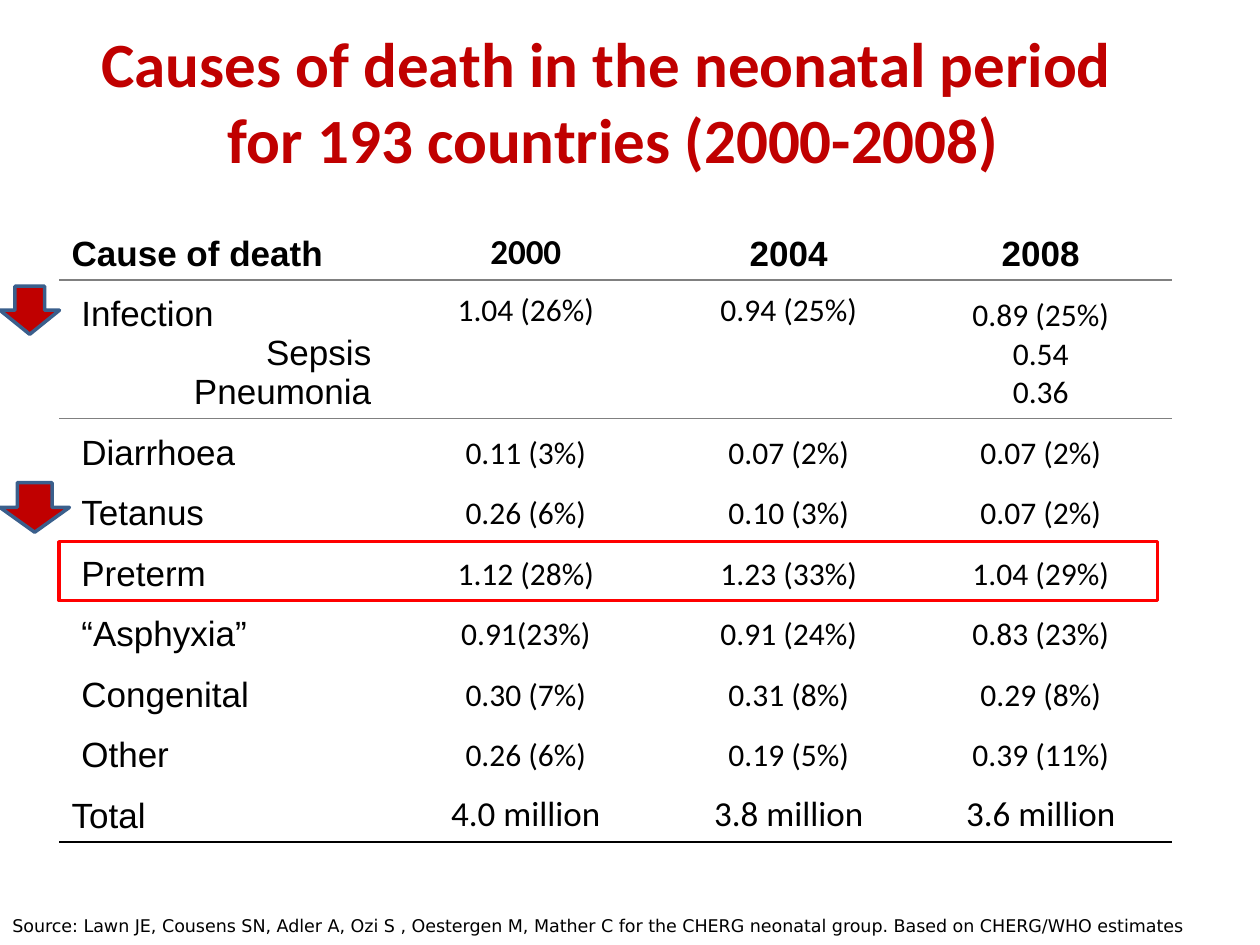
import pptx
import pptx.util
import pptx.dml.color
import pptx.enum.shapes
import pptx.enum.text
import pptx.oxml
import pptx.oxml.ns
from dataclasses import dataclass

Cm, Pt = pptx.util.Cm, pptx.util.Pt
SHAPE = pptx.enum.shapes.MSO_SHAPE
ANCHOR = pptx.enum.text.MSO_ANCHOR
ALIGN = pptx.enum.text.PP_ALIGN
NO_GRID_STYLE = "{2D5ABB26-0587-4C30-8999-92F81FD0307C}"


@dataclass(frozen=True)
class Theme:
    red: str = "C00000"
    highlight: str = "FF0000"
    arrow_line: str = "3A5F8C"
    black: str = "000000"
    grey: str = "808080"
    white: str = "FFFFFF"
    body: str = "Calibri"
    label: str = "Arial"
    note: str = "DejaVu Sans"
    title_size: int = 36
    label_size: int = 20
    value_size: int = 18
    note_size: int = 10


def rgb(value):
    return pptx.dml.color.RGBColor.from_string(value)


class Deck:
    def __init__(self, theme):
        self.theme = theme
        self.prs = pptx.Presentation()
        self.prs.slide_width, self.prs.slide_height = Cm(25.4), Cm(19.05)
        self.s = self.prs.slides.add_slide(self.prs.slide_layouts[6])

    def set_text(self, tf, lines, font, size, color, aligns, bold=False):
        for i, (line, align) in enumerate(zip(lines, aligns)):
            p = tf.paragraphs[0] if i == 0 else tf.add_paragraph()
            p.text = line
            p.alignment = align
            p.font.name, p.font.size, p.font.bold = font, Pt(size), bold
            p.font.color.rgb = rgb(color)

    def title(self, x, y, w, h, lines):
        tf = self.s.shapes.add_textbox(Cm(x), Cm(y), Cm(w), Cm(h)).text_frame
        tf.word_wrap = False
        tf.vertical_anchor = ANCHOR.MIDDLE
        self.set_text(tf, lines, self.theme.body, self.theme.title_size,
                      self.theme.red, [ALIGN.CENTER] * len(lines), bold=True)

    def shape(self, kind, x, y, w, h, fill=None, line=None):
        sp = self.s.shapes.add_shape(kind, Cm(x), Cm(y), Cm(w), Cm(h))
        sp.shadow.inherit = False
        if fill:
            sp.fill.solid()
            sp.fill.fore_color.rgb = rgb(fill)
        else:
            sp.fill.background()
        if line:
            sp.line.color.rgb = rgb(line)
            sp.line.width = Pt(2)
        else:
            sp.line.fill.background()
        return sp

    def note(self, x, y, w, h, text):
        tf = self.shape(SHAPE.RECTANGLE, x, y, w, h, self.theme.white).text_frame
        tf.word_wrap = True
        self.set_text(tf, [text], self.theme.note, self.theme.note_size,
                      self.theme.black, [ALIGN.LEFT])

    def border(self, cell, side, color):
        ln = pptx.oxml.parse_xml(
            f'<a:{side} {pptx.oxml.ns.nsdecls("a")} w="{Pt(1)}"><a:solidFill>'
            f'<a:srgbClr val="{color}"/></a:solidFill></a:{side}>')
        cell._tc.get_or_add_tcPr().insert(0, ln)

    def table(self, x, y, widths, heights, rows):
        t = self.theme
        frame = self.s.shapes.add_table(len(rows), len(widths), Cm(x), Cm(y),
                                        Cm(sum(widths)), Cm(sum(heights)))
        table = frame.table
        table.first_row = table.horz_banding = False
        table._tbl.tblPr.find(pptx.oxml.ns.qn("a:tableStyleId")).text = NO_GRID_STYLE
        for column, width in zip(table.columns, widths):
            column.width = Cm(width)
        for row, height in zip(table.rows, heights):
            row.height = Cm(height)

        last = len(rows) - 1
        for r, row in enumerate(rows):
            tallest = max(len(text.split("\n")) for text in row)
            for c, text in enumerate(row):
                cell = table.cell(r, c)
                lines = text.split("\n")
                cell.fill.background()
                cell.vertical_anchor = ANCHOR.BOTTOM
                if c and len(lines) < tallest:  # align with the first line
                    cell.vertical_anchor = ANCHOR.TOP
                    cell.margin_top = Cm(0.24)
                if c == 0 and 0 < r < last:  # causes are indented
                    cell.margin_left = Cm(0.45)

                aligns = [ALIGN.CENTER] * len(lines)
                if c == 0:
                    aligns = [ALIGN.LEFT] + [ALIGN.RIGHT] * (len(lines) - 1)
                arial = c == 0 or (r == 0 and c > 1)
                large = c == 0 or r in (0, last)
                self.set_text(cell.text_frame, lines, t.label if arial else t.body,
                              t.label_size if large else t.value_size,
                              t.black, aligns, bold=r == 0)

                if r in (0, last):
                    self.border(cell, "lnB", t.black if r else t.grey)
                elif r == 1:
                    self.border(cell, "lnT", t.grey)


def main():
    theme = Theme()
    deck = Deck(theme)

    # Title
    deck.title(0.84, 1.07, 23.06, 1.9,
               ["Causes of death in the neonatal period ",
                "for 193 countries (2000-2008)"])

    # Deaths in millions by cause and year
    rows = [
        ("Cause of death", "2000", "2004", "2008"),
        ("Infection\nSepsis\nPneumonia", "1.04 (26%)", "0.94 (25%)",
         "0.89 (25%)\n0.54\n0.36"),
        ("Diarrhoea", "0.11 (3%)", "0.07 (2%)", "0.07 (2%)"),
        ("Tetanus", "0.26 (6%)", "0.10 (3%)", "0.07 (2%)"),
        ("Preterm", "1.12 (28%)", "1.23 (33%)", "1.04 (29%)"),
        ("“Asphyxia”", "0.91(23%)", "0.91 (24%)", "0.83 (23%)"),
        ("Congenital", "0.30 (7%)", "0.31 (8%)", "0.29 (8%)"),
        ("Other", "0.26 (6%)", "0.19 (5%)", "0.39 (11%)"),
        ("Total", "4.0 million", "3.8 million", "3.6 million"),
    ]
    deck.table(1.19, 4.37, [6.55, 5.72, 4.88, 5.28],
               [1.27, 2.65] + [1.22] * 7, rows)

    # Source note
    deck.note(0, 18.31, 25.2, 0.69,
              "Source: Lawn JE, Cousens SN, Adler A, Ozi S , Oestergen M, Mather C "
              "for the CHERG neonatal group. Based on CHERG/WHO estimates")

    # Falling causes: tetanus and infection
    for y, w, h in [(9.73, 1.4, 1.0), (5.77, 1.2, 0.97)]:
        deck.shape(SHAPE.DOWN_ARROW, 0, y, w, h, theme.red, theme.arrow_line)

    # Highlight around the preterm row
    deck.shape(SHAPE.RECTANGLE, 1.19, 10.92, 22.15, 1.19, line=theme.highlight)

    deck.prs.save("out.pptx")


if __name__ == "__main__":
    main()
